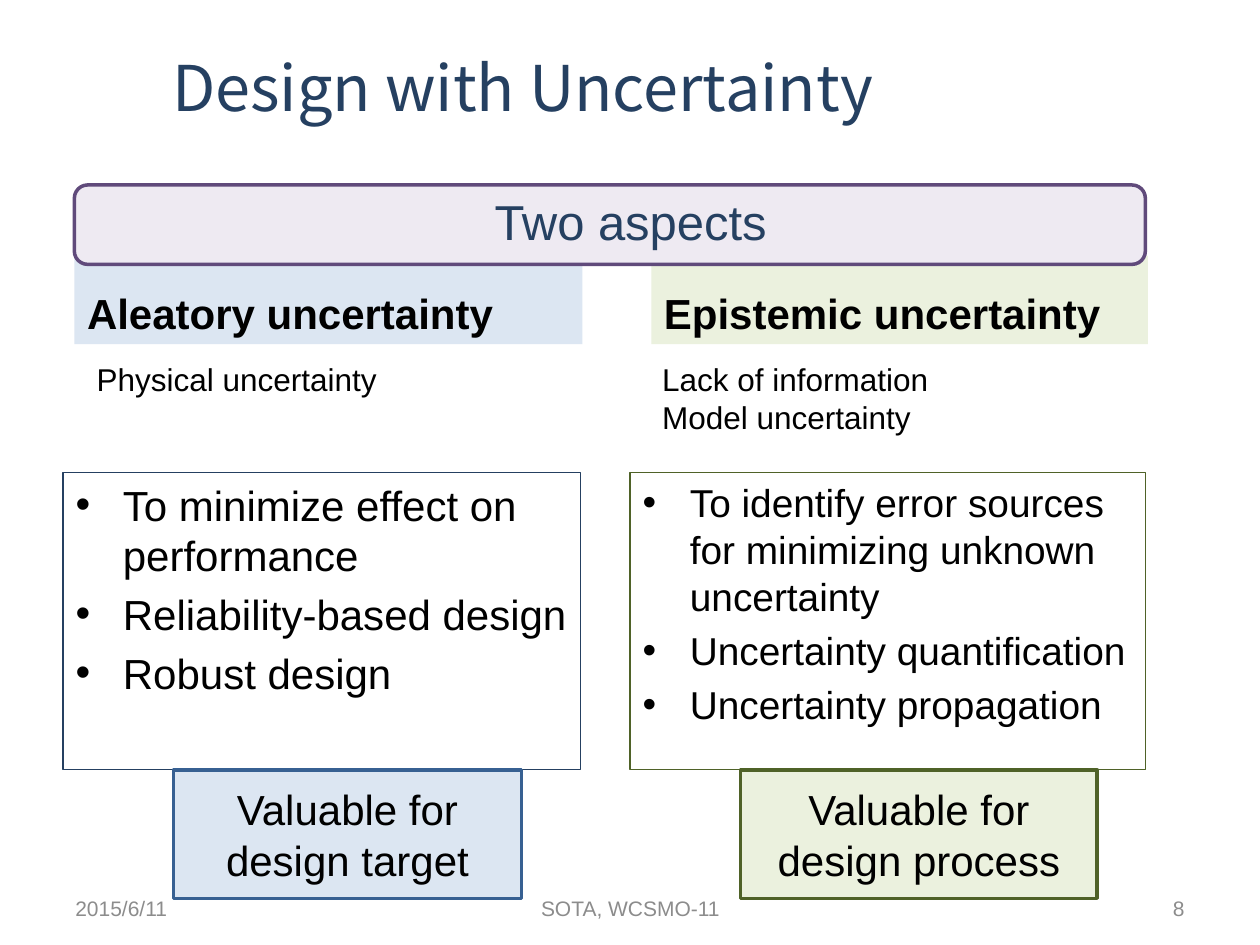
import pptx
import pptx.dml.color
import pptx.enum.shapes
import pptx.enum.text
import pptx.util

Cm = pptx.util.Cm
Pt = pptx.util.Pt
RGBColor = pptx.dml.color.RGBColor
Align = pptx.enum.text.PP_ALIGN
Anchor = pptx.enum.text.MSO_ANCHOR
Shape = pptx.enum.shapes.MSO_SHAPE

NAVY = RGBColor(0x25, 0x40, 0x61)
BLUE = RGBColor(0x37, 0x60, 0x92)
PALE_BLUE = RGBColor(0xDC, 0xE6, 0xF2)
GREEN = RGBColor(0x4F, 0x62, 0x28)
PALE_GREEN = RGBColor(0xEB, 0xF1, 0xDE)
PURPLE = RGBColor(0x60, 0x4A, 0x7B)
PALE_PURPLE = RGBColor(0xEE, 0xEA, 0xF2)
GREY = RGBColor(0x8C, 0x8C, 0x8C)
BLACK = RGBColor(0, 0, 0)

TITLE = "Design with Uncertainty "
BANNER = "Two aspects"

# Horizontal places are (left, width) in centimetres.
ASPECTS = [
    {
        "heading": "Aleatory uncertainty", "heading_place": (1.5, 10.24),
        "causes": ["Physical uncertainty"], "causes_place": (1.7, 6.22),
        "goals": ["To minimize effect on performance",
                  "Reliability-based design", "Robust design"],
        "goals_place": (1.27, 10.44), "goals_size": 24, "goals_line": NAVY,
        "value": "Valuable for design target", "value_place": (3.5, 7.01),
        "value_line": BLUE, "fill": PALE_BLUE,
    },
    {
        "heading": "Epistemic uncertainty", "heading_place": (13.13, 10.01),
        "causes": ["Lack of information", "Model uncertainty"],
        "causes_place": (13.1, 5.92),
        "goals": ["To identify error sources for minimizing unknown uncertainty",
                  "Uncertainty quantification", "Uncertainty propagation"],
        "goals_place": (12.7, 10.39), "goals_size": 22.2, "goals_line": GREEN,
        "value": "Valuable for design process", "value_place": (14.93, 7.19),
        "value_line": GREEN, "fill": PALE_GREEN,
    },
]
FOOTERS = [
    ("2015/6/11", 1.27, 5.92, Align.LEFT),
    ("SOTA, WCSMO-11", 8.69, 8.04, Align.CENTER),
    ("8", 21.89, 2.24, Align.RIGHT),
]


def place(shape, left, top, width, height):
    shape.left, shape.top = Cm(left), Cm(top)
    shape.width, shape.height = Cm(width), Cm(height)


def write(shape, lines, size, color=BLACK, align=Align.LEFT, anchor=Anchor.TOP,
          bold=False, font="Arial", wrap=True, gap=0):
    """Fill a shape with one paragraph per line, gap points apart."""
    frame = shape.text_frame
    frame.text = "\n".join(lines)
    frame.word_wrap = wrap
    frame.auto_size = pptx.enum.text.MSO_AUTO_SIZE.NONE
    frame.vertical_anchor = anchor
    for index, paragraph in enumerate(frame.paragraphs):
        paragraph.alignment = align
        paragraph.space_before = Pt(gap if index else 0)
        for run in paragraph.runs:
            run.font.name = font
            run.font.size = Pt(size)
            run.font.bold = bold
            run.font.color.rgb = color


def outline(shape, color, width):
    shape.line.color.rgb = color
    shape.line.width = Pt(width)


def fill(shape, color):
    shape.fill.solid()
    shape.fill.fore_color.rgb = color


def add_box(slide, kind, bounds, fill_color, line_color):
    shape = slide.shapes.add_shape(kind, *map(Cm, bounds))
    shape.shadow.inherit = False
    fill(shape, fill_color)
    outline(shape, line_color, 2)
    return shape


def add_aspect(slide, aspect, heading, goals):
    left, width = aspect["heading_place"]
    place(heading, left, 5.16, width, 1.78)
    fill(heading, aspect["fill"])
    write(heading, [aspect["heading"]], 24, anchor=Anchor.BOTTOM, bold=True)

    left, width = aspect["goals_place"]
    place(goals, left, 9.53, width, 5.99)
    outline(goals, aspect["goals_line"], 0.75)
    size = aspect["goals_size"]
    write(goals, aspect["goals"], size, gap=round(size * 0.2, 1))

    left, width = aspect["causes_place"]
    height = 0.25 + 0.77 * len(aspect["causes"])
    causes = slide.shapes.add_textbox(Cm(left), Cm(7.14), Cm(width), Cm(height))
    write(causes, aspect["causes"], 18, wrap=False)

    left, width = aspect["value_place"]
    value = add_box(slide, Shape.RECTANGLE, (left, 15.52, width, 2.59),
                    aspect["fill"], aspect["value_line"])
    write(value, [aspect["value"]], 24, align=Align.CENTER, anchor=Anchor.MIDDLE)


def main():
    presentation = pptx.Presentation()
    presentation.slide_width, presentation.slide_height = Cm(25.4), Cm(19.05)
    comparison_layout = presentation.slide_layouts[4]
    slide = presentation.slides.add_slide(comparison_layout)
    title, *bodies = slide.placeholders

    place(title, 1.27, 0.76, 18.82, 1.96)
    write(title, [TITLE], 36, NAVY, Align.CENTER, Anchor.MIDDLE,
          font="Noto Sans CJK JP")

    for index, aspect in enumerate(ASPECTS):
        heading, goals = bodies[2 * index:2 * index + 2]
        add_aspect(slide, aspect, heading, goals)

    add_box(slide, Shape.ROUNDED_RECTANGLE, (1.5, 3.73, 21.59, 1.6),
            PALE_PURPLE, PURPLE)
    banner = slide.shapes.add_textbox(Cm(9.68), Cm(3.73), Cm(6.07), Cm(1.45))
    write(banner, [BANNER], 28, NAVY, Align.CENTER, wrap=False)

    for text, left, width, align in FOOTERS:
        footer = slide.shapes.add_textbox(Cm(left), Cm(17.93), Cm(width), Cm(0.74))
        write(footer, [text], 12, GREY, align, Anchor.MIDDLE)

    presentation.save("out.pptx")


if __name__ == "__main__":
    main()
